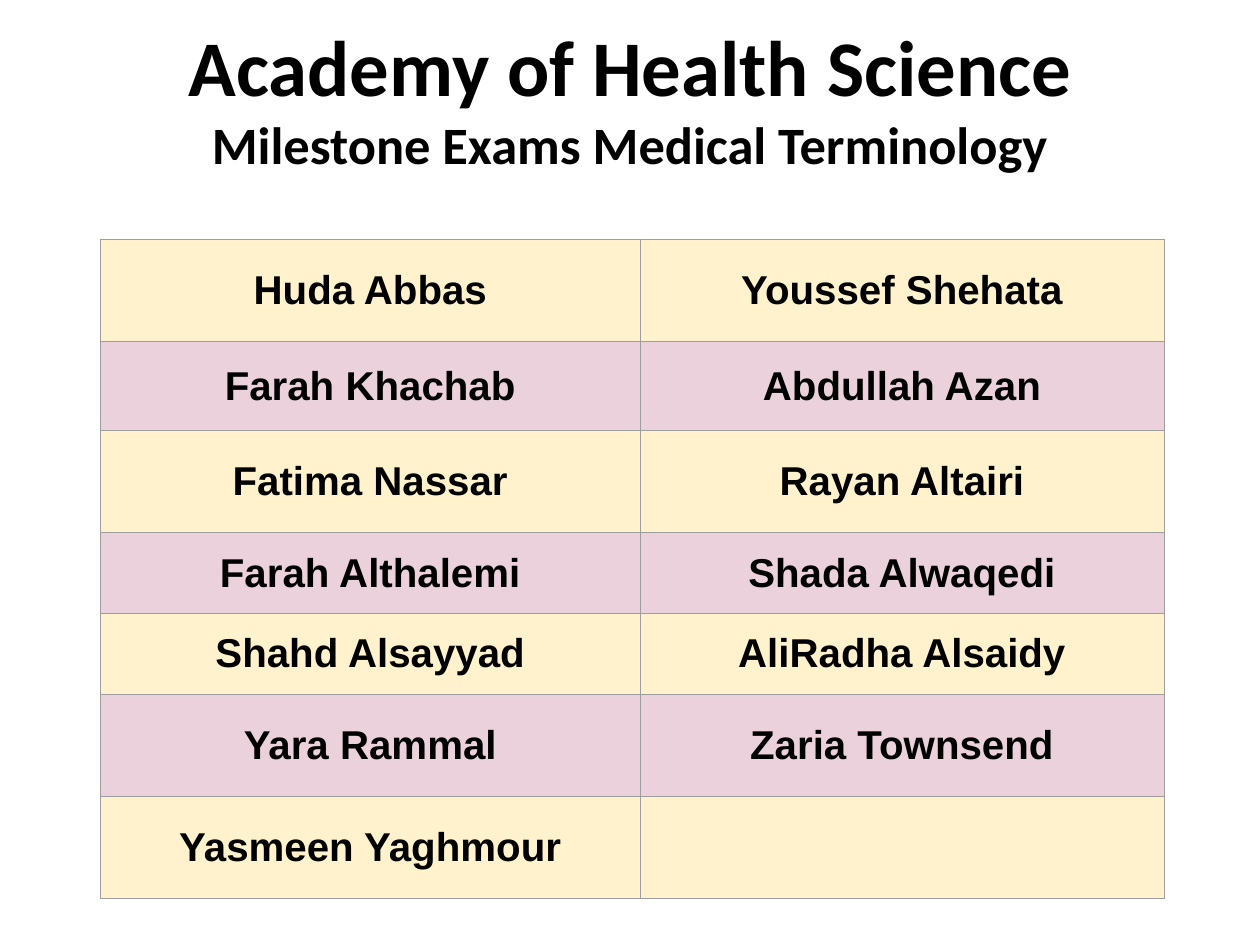
from lxml import etree
from pptx import Presentation
from pptx.dml.color import RGBColor
from pptx.enum.text import MSO_ANCHOR, PP_ALIGN
from pptx.oxml.ns import qn
from pptx.util import Inches, Pt

CENTER = PP_ALIGN.CENTER
MIDDLE = MSO_ANCHOR.MIDDLE

BLACK = "000000"
BORDER_GRAY = "9E9E9E"
ROW_FILLS = ("FFF2CC", "EAD1DC")

COLUMN_WIDTHS = (4.28, 4.16)
ROW_HEIGHTS = (0.81, 0.71, 0.81, 0.64, 0.64, 0.81, 0.81)
STUDENTS = (
    ("Huda Abbas", "Youssef Shehata"),
    ("Farah Khachab", "Abdullah Azan"),
    ("Fatima Nassar", "Rayan Altairi"),
    ("Farah Althalemi", "Shada Alwaqedi"),
    ("Shahd Alsayyad", "AliRadha Alsaidy"),
    ("Yara Rammal", "Zaria Townsend"),
    ("Yasmeen Yaghmour", ""),
)


def color(hex_value):
    return RGBColor.from_string(hex_value)


def write_text(para, text, size, font, fill=BLACK, bold=True):
    para.alignment = CENTER
    span = para.add_run()
    span.text = text
    span.font.size = Pt(size)
    span.font.name = font
    span.font.bold = bold
    span.font.color.rgb = color(fill)


def add_heading(page):
    box = page.shapes.add_textbox(Inches(0.04), Inches(0.09), Inches(9.92), Inches(1.82))
    frame = box.text_frame
    frame.word_wrap = True
    write_text(frame.paragraphs[0], "Academy of Health Science", size=45, font="Calibri")
    write_text(frame.add_paragraph(), "Milestone Exams Medical Terminology",
               size=30, font="Calibri")


def add_borders(cell, hex_value, width):
    properties = cell._tc.get_or_add_tcPr()
    # Border lines must come before the fill
    for position, side in enumerate(("a:lnL", "a:lnR", "a:lnT", "a:lnB")):
        line = etree.Element(qn(side), w=str(Pt(width)))
        solid = etree.SubElement(line, qn("a:solidFill"))
        etree.SubElement(solid, qn("a:srgbClr"), val=hex_value)
        properties.insert(position, line)


def format_cell(cell, name, fill):
    cell.fill.solid()
    cell.fill.fore_color.rgb = color(fill)
    cell.vertical_anchor = MIDDLE
    cell.margin_left = cell.margin_right = Inches(0.1)
    cell.margin_top = cell.margin_bottom = Inches(0.1)
    add_borders(cell, BORDER_GRAY, 0.75)
    if name:
        write_text(cell.text_frame.paragraphs[0], name, size=23, font="Arial")


def add_student_table(page):
    table = page.shapes.add_table(
        len(STUDENTS), len(COLUMN_WIDTHS), Inches(0.8), Inches(1.9),
        Inches(sum(COLUMN_WIDTHS)), Inches(sum(ROW_HEIGHTS))).table
    table.first_row = False
    table.horz_banding = False
    for column, width in zip(table.columns, COLUMN_WIDTHS):
        column.width = Inches(width)
    for index, (row, height) in enumerate(zip(table.rows, ROW_HEIGHTS)):
        row.height = Inches(height)
        for cell, name in zip(row.cells, STUDENTS[index]):
            format_cell(cell, name, ROW_FILLS[index % 2])


def main():
    deck = Presentation()
    deck.slide_width = Inches(10)
    deck.slide_height = Inches(7.5)
    page = deck.slides.add_slide(deck.slide_layouts[6])
    add_heading(page)
    add_student_table(page)
    deck.save("out.pptx")


if __name__ == "__main__":
    main()
